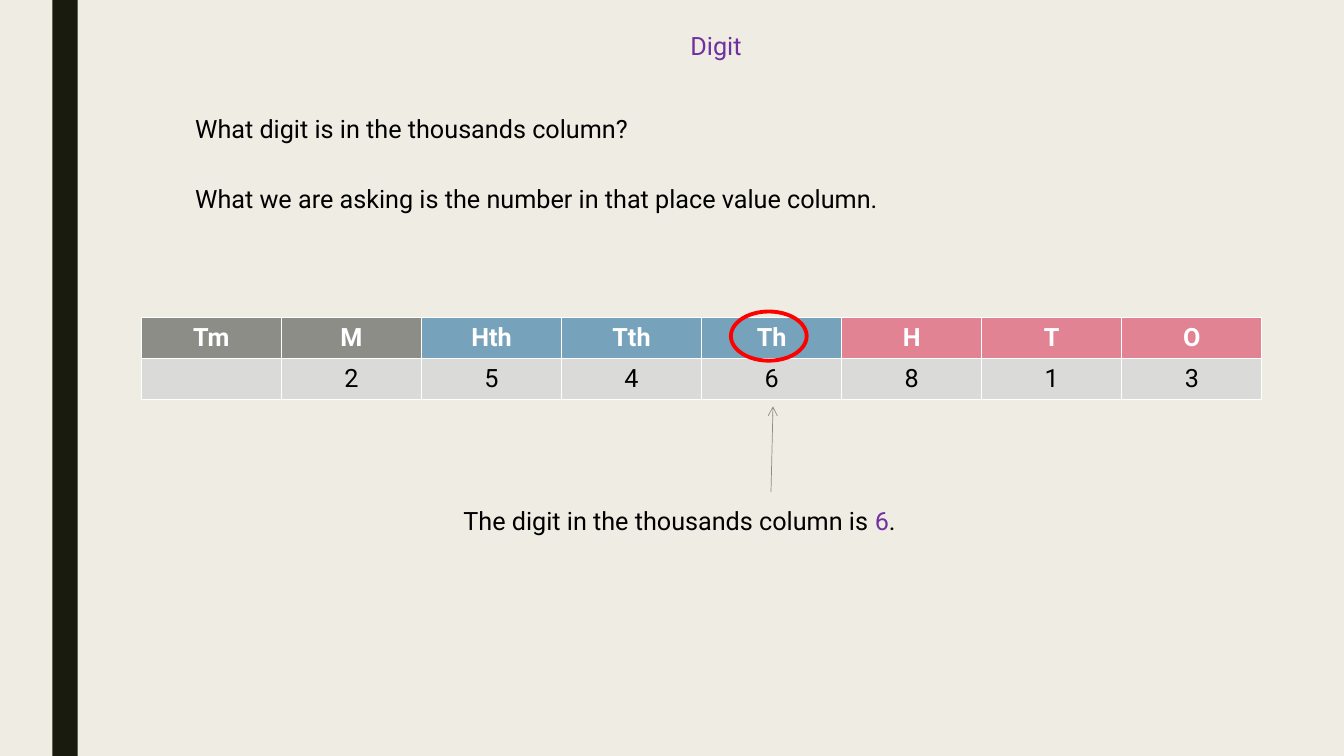
from lxml.etree import SubElement
from pptx import Presentation
from pptx.dml.color import RGBColor
from pptx.enum.shapes import MSO_CONNECTOR as Connector, MSO_SHAPE as Shape
from pptx.enum.text import MSO_ANCHOR as Anchor, MSO_AUTO_SIZE as AutoSize, PP_ALIGN as Align
from pptx.oxml.ns import qn
from pptx.util import Cm, Pt

CREAM = RGBColor(0xEF, 0xED, 0xE3)
DARK = RGBColor(0x19, 0x1B, 0x0E)
PURPLE = RGBColor(0x70, 0x30, 0xA0)
BLACK = RGBColor(0, 0, 0)
WHITE = RGBColor(0xFF, 0xFF, 0xFF)
RED = RGBColor(0xFF, 0, 0)
GREY = RGBColor(0x8C, 0x8D, 0x86)
BLUE = RGBColor(0x77, 0xA2, 0xBB)
PINK = RGBColor(0xE2, 0x83, 0x94)
PALE = RGBColor(0xDA, 0xDB, 0xD9)
FONT = "Roboto"

PLACES = [
    ("Tm", "", GREY), ("M", "2", GREY),
    ("Hth", "5", BLUE), ("Tth", "4", BLUE), ("Th", "6", BLUE),
    ("H", "8", PINK), ("T", "1", PINK), ("O", "3", PINK),
]
TEXTS = [
    (5.28, 0.64, 25.53, Align.CENTER, True, [("Digit", PURPLE)]),
    (4.67, 2.74, 11.66, Align.LEFT, False, [("What digit is in the thousands column?", BLACK)]),
    (4.67, 4.5, 18.14, Align.LEFT, False,
     [("What we are asking is the number in that place value column.", BLACK)]),
    (11.43, 12.62, 11.63, Align.LEFT, False,
     [("The digit in the thousands column is ", BLACK), ("6", PURPLE), (".", BLACK)]),
]
TABLE_LEFT, TABLE_TOP = 3.56, 8.0
COLUMN_WIDTH, ROW_HEIGHT = 3.53, 1.03


def style(para, align):
    para.alignment = align
    para.font.name = FONT
    para.font.size = Pt(18)


def add_text(page, left, top, width, align, wrap, spans):
    box = page.shapes.add_textbox(Cm(left), Cm(top), Cm(width), Cm(1.02))
    frame = box.text_frame
    frame.word_wrap = wrap
    frame.auto_size = AutoSize.SHAPE_TO_FIT_TEXT
    para = frame.paragraphs[0]
    style(para, align)
    for text, color in spans:
        span = para.add_run()
        span.text = text
        span.font.color.rgb = color


def fill_cell(cell, text, fill, color, bold):
    cell.fill.solid()
    cell.fill.fore_color.rgb = fill
    cell.vertical_anchor = Anchor.MIDDLE
    cell.text = text
    para = cell.text_frame.paragraphs[0]
    style(para, Align.CENTER)
    para.font.bold = bold
    para.font.color.rgb = color


def add_place_table(page):
    table = page.shapes.add_table(
        2, len(PLACES), Cm(TABLE_LEFT), Cm(TABLE_TOP),
        Cm(COLUMN_WIDTH * len(PLACES)), Cm(ROW_HEIGHT * 2)).table
    for row in table.rows:
        row.height = Cm(ROW_HEIGHT)
    for index, (place, digit, color) in enumerate(PLACES):
        table.columns[index].width = Cm(COLUMN_WIDTH)
        fill_cell(table.cell(0, index), place, color, WHITE, True)
        fill_cell(table.cell(1, index), digit, PALE, BLACK, False)


def add_arrow(page):
    arrow = page.shapes.add_connector(
        Connector.STRAIGHT, Cm(19.43), Cm(12.4), Cm(19.48), Cm(10.24))
    arrow.line.color.rgb = GREY
    arrow.line.width = Pt(0.5)
    SubElement(arrow.line._get_or_add_ln(), qn("a:tailEnd"), type="arrow")
    SubElement(arrow._element.spPr, qn("a:effectLst"))


def main():
    deck = Presentation()
    deck.slide_width, deck.slide_height = Cm(33.87), Cm(19.05)
    page = deck.slides.add_slide(deck.slide_layouts[6])
    page.background.fill.solid()
    page.background.fill.fore_color.rgb = CREAM

    bar = page.shapes.add_shape(Shape.RECTANGLE, Cm(1.32), 0, Cm(0.64), deck.slide_height)
    bar.shadow.inherit = False
    bar.fill.solid()
    bar.fill.fore_color.rgb = DARK
    bar.line.fill.background()

    add_place_table(page)
    for text in TEXTS:
        add_text(page, *text)
    add_arrow(page)

    ring = page.shapes.add_shape(Shape.OVAL, Cm(18.42), Cm(7.85), Cm(1.91), Cm(1.24))
    ring.shadow.inherit = False
    ring.fill.background()
    ring.line.color.rgb = RED
    ring.line.width = Pt(2.75)

    deck.save("out.pptx")


if __name__ == "__main__":
    main()
